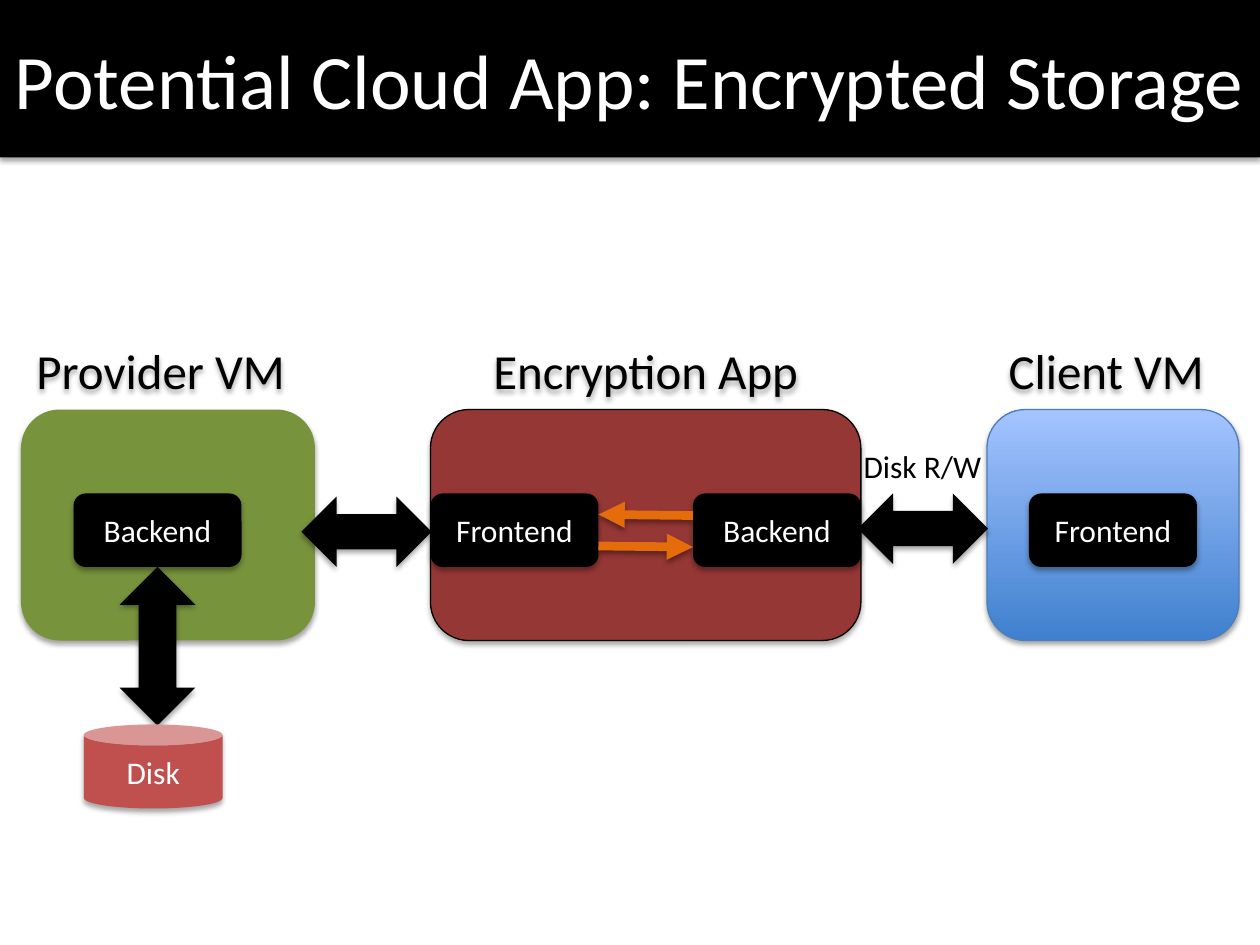
from lxml import etree
from pptx import Presentation, util as u
from pptx.dml.color import RGBColor
from pptx.enum import shapes, text
from pptx.oxml.ns import qn

THEME = {
    "font": "Calibri", "title": 44, "label": 28, "body": 18,
    "black": "000000", "white": "FFFFFF", "green": "77933C", "maroon": "953735",
    "red": "C0504D", "orange": "E46C0A", "edge": "4B7EBC",
    "blue": ("3F80CE", "A4C4FF"),
}
WIDTH, HEIGHT = 10, 7.5
COLUMNS = 120                      # square grid cells across the slide
CELL = WIDTH / COLUMNS

# Content: places are (column, row, columns, rows)
TITLE = "Potential Cloud App: Encrypted Storage"
MACHINES = [                       # name, column, columns, fill, line, label place
    ("Provider VM", 2, 28, "green", None, (2, 26.6)),
    ("Encryption App", 41, 41, "maroon", "black", (44, 35)),
    ("Client VM", 94, 24, "blue", "edge", (93.7, 23.3)),
]
MACHINE_ROW, MACHINE_ROWS = 39, 22
LABEL_ROW, LABEL_ROWS = 31.5, 7.5
DRIVERS = [("Backend", 7), ("Frontend", 41), ("Backend", 66), ("Frontend", 98)]
DRIVER_ROW, DRIVER_COLUMNS, DRIVER_ROWS = 47, 16, 7
BLOCK_ARROWS = [
    ("LEFT_RIGHT_ARROW", (81.7, 47, 12.4, 6.7)),
    ("LEFT_RIGHT_ARROW", (28.7, 47.3, 12.4, 6.7)),
    ("UP_DOWN_ARROW", (11.4, 54, 7.2, 15.1)),
]
FLOWS = [(52, "tailEnd"), (49, "headEnd")]     # row, end with the arrowhead
DISK = ("Disk", (8, 69, 13.2, 8))
TRAFFIC = ("Disk R/W", (81, 42, 13.7, 4.8))

deck = Presentation()
deck.slide_width, deck.slide_height = u.Inches(WIDTH), u.Inches(HEIGHT)
page = deck.slides.add_slide(deck.slide_layouts[6])


def grid(*cells):
    return [u.Inches(cell * CELL) for cell in cells]


def color(name):
    return RGBColor.from_string(THEME[name])


def add_shadow(item, opacity=35):
    effects = etree.SubElement(item._element.spPr, qn("a:effectLst"))
    shadow = etree.SubElement(effects, qn("a:outerShdw"), blurRad=str(u.Pt(3.1)),
                              dist=str(u.Pt(1.8)), dir="5400000", rotWithShape="0")
    tint = etree.SubElement(shadow, qn("a:srgbClr"), val=THEME["black"])
    etree.SubElement(tint, qn("a:alpha"), val=str(opacity * 1000))


def write(box, words, size, ink):
    frame = box.text_frame
    frame.word_wrap = False
    frame.vertical_anchor = text.MSO_ANCHOR.MIDDLE
    para = frame.paragraphs[0]
    para.alignment = text.PP_ALIGN.CENTER
    span = para.add_run()
    span.text = words
    span.font.name, span.font.size = THEME["font"], u.Pt(THEME[size])
    span.font.color.rgb = color(ink)


def add_box(kind, place, fill, line=None, words=None, size="body"):
    box = page.shapes.add_shape(shapes.MSO_SHAPE[kind], *grid(*place))
    if isinstance(THEME[fill], tuple):
        box.fill.gradient()
        box.fill.gradient_angle = 90
        for position, (stop, shade) in enumerate(zip(box.fill.gradient_stops, THEME[fill])):
            stop.position = position
            stop.color.rgb = RGBColor.from_string(shade)
    else:
        box.fill.solid()
        box.fill.fore_color.rgb = color(fill)
    if line:
        box.line.color.rgb = color(line)
        box.line.width = u.Pt(0.75)
    else:
        box.line.fill.background()
    add_shadow(box)
    if words:
        write(box, words, size, "white")


def add_label(words, place, size):
    label = page.shapes.add_textbox(*grid(*place))
    write(label, words, size, "black")
    return label


# Title band
add_box("RECTANGLE", (0, 0, COLUMNS, 15), "black", words=TITLE, size="title")

# Machines and their labels
for name, column, columns, fill, line, (label_column, label_columns) in MACHINES:
    add_box("ROUNDED_RECTANGLE", (column, MACHINE_ROW, columns, MACHINE_ROWS), fill, line)
    add_shadow(add_label(name, (label_column, LABEL_ROW, label_columns, LABEL_ROWS), "label"))

# Drivers inside the machines
for name, column in DRIVERS:
    add_box("ROUNDED_RECTANGLE", (column, DRIVER_ROW, DRIVER_COLUMNS, DRIVER_ROWS),
            "black", words=name)

# Flows between the two drivers of the encryption app
for row, end in FLOWS:
    start = DRIVERS[1][1] + DRIVER_COLUMNS
    flow = page.shapes.add_connector(shapes.MSO_CONNECTOR.STRAIGHT,
                                     *grid(start, row, DRIVERS[2][1], row + 0.1))
    flow.line.color.rgb = color("orange")
    flow.line.width = u.Pt(5)
    etree.SubElement(flow.line._get_or_add_ln(), qn("a:" + end), type="triangle")
    add_shadow(flow, 38)

# Links between machines, and the disk
for kind, place in BLOCK_ARROWS:
    add_box(kind, place, "black")
add_label(*TRAFFIC, "body")
add_box("CAN", DISK[1], DISK_FILL := "red", words=DISK[0])

deck.save("out.pptx")
